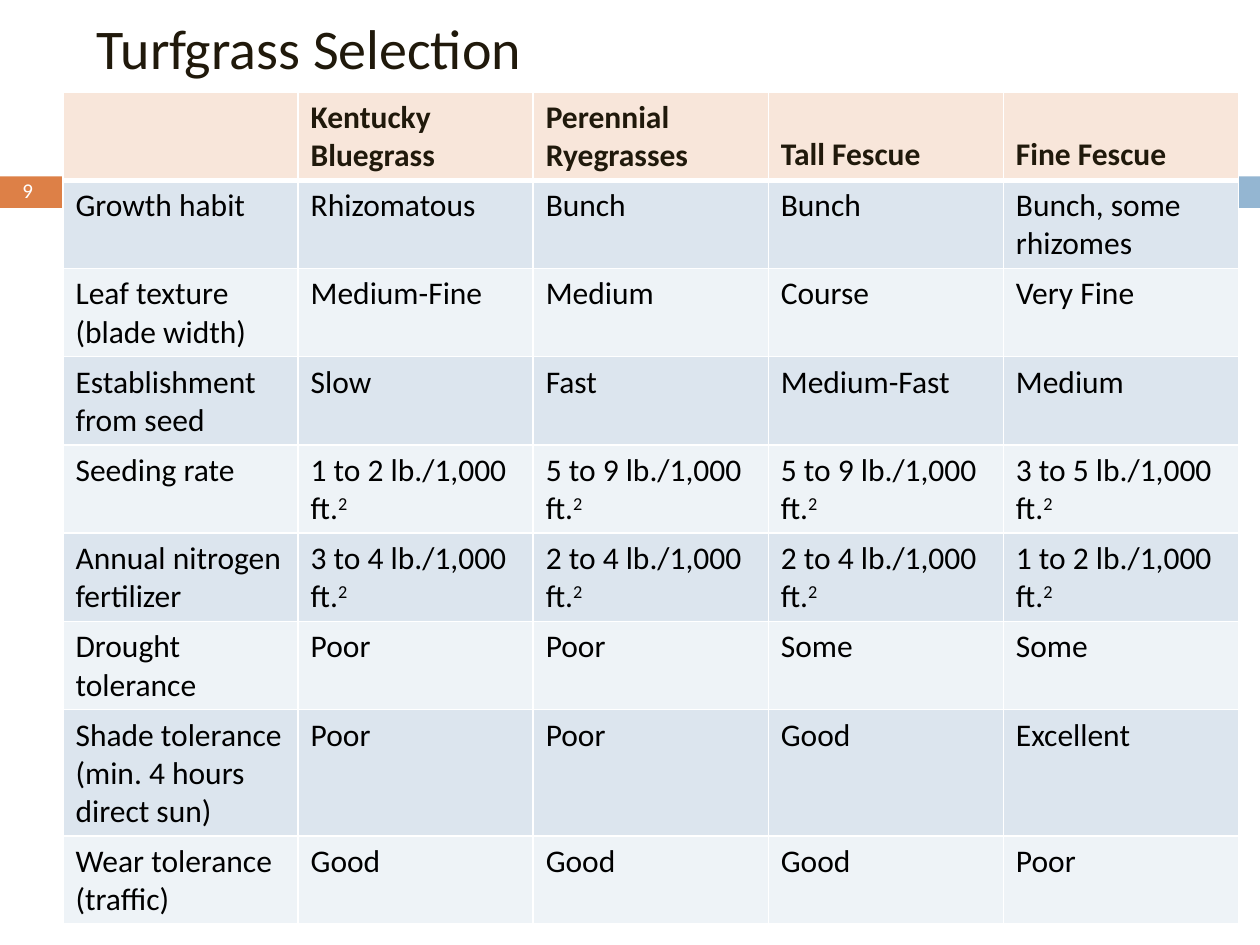
from lxml import etree
from pptx import Presentation
from pptx.dml.color import RGBColor
from pptx.enum.shapes import MSO_SHAPE
from pptx.enum.text import MSO_ANCHOR
from pptx.oxml.ns import qn
from pptx.util import Inches, Pt

RECT = MSO_SHAPE.RECTANGLE
TOP, MIDDLE, BOTTOM = MSO_ANCHOR.TOP, MSO_ANCHOR.MIDDLE, MSO_ANCHOR.BOTTOM
FONT = "Calibri"
COLORS = {
    "orange": "DD8047", "blue": "94B6D2", "white": "FFFFFF", "black": "000000",
    "dark": "20190B", "header": "F8E6DA", "odd": "DCE5EE", "even": "EEF3F7",
}
HEADER = ["", "Kentucky\vBluegrass", "Perennial\vRyegrasses", "Tall Fescue", "Fine Fescue"]
RATE = "{} lb./1,000 ft.²"
ROWS = [
    ["Growth habit", "Rhizomatous", "Bunch", "Bunch", "Bunch, some rhizomes"],
    ["Leaf texture\n(blade width)", "Medium-Fine", "Medium", "Course", "Very Fine"],
    ["Establishment from seed", "Slow", "Fast", "Medium-Fast", "Medium"],
    ["Seeding rate"] + [RATE.format(n) for n in ("1 to 2", "5 to 9", "5 to 9", "3 to 5")],
    ["Annual nitrogen\nfertilizer"]
    + [RATE.format(n) for n in ("3 to 4", "2 to 4", "2 to 4", "1 to 2")],
    ["Drought\ntolerance", "Poor", "Poor", "Some", "Some"],
    ["Shade tolerance (min. 4 hours direct sun)", "Poor", "Poor", "Good", "Excellent"],
    ["Wear tolerance (traffic)", "Good", "Good", "Good", "Poor"],
]


def rgb(name):
    """Return the named colour."""
    return RGBColor.from_string(COLORS[name])


def add_run(p, text, size, color, bold=False):
    """Add a styled run to a paragraph."""
    r = p.add_run()
    r.text = text
    r.font.name, r.font.size, r.font.bold = FONT, Pt(size), bold
    r.font.color.rgb = rgb(color)
    return r


def write(tf, text, size, color, bold=False):
    """Fill a text frame with paragraphs, line breaks and raised squares."""
    for i, para in enumerate(text.split("\n")):
        p = tf.add_paragraph() if i else tf.paragraphs[0]
        p.font.size = Pt(size)
        for j, line in enumerate(para.split("\v")):
            if j:
                p.add_line_break()
            base, square, _ = line.partition("²")
            if base:
                add_run(p, base, size, color, bold)
            if square:
                r = add_run(p, "2", size, color, bold)
                r._r.get_or_add_rPr().set("baseline", "30000")


def add_text(slide, box, text, size, color, anchor, wrap=True):
    """Add a text box in the given box."""
    tf = slide.shapes.add_textbox(*map(Inches, box)).text_frame
    tf.word_wrap, tf.vertical_anchor = wrap, anchor
    write(tf, text, size, color)


def add_band(slide, left, top, width, height):
    """Add the two-colour band with the slide number."""
    tab, gap = 0.58, 0.07
    parts = [(left, tab, "orange"), (left + tab + gap, width - tab - gap, "blue")]
    for x, w, color in parts:
        sp = slide.shapes.add_shape(RECT, *map(Inches, (x, top, w, height)))
        sp.shadow.inherit = False
        sp.fill.solid()
        sp.fill.fore_color.rgb = rgb(color)
        sp.line.fill.background()
    box = (left + 0.08, top - 0.04, tab - 0.08, 0.3)
    add_text(slide, box, "9", 12, "white", TOP, wrap=False)


def set_borders(cell, top, bottom):
    """Draw white cell borders with the given top and bottom widths."""
    tcPr = cell._tc.get_or_add_tcPr()
    for side, width in (("L", 1), ("R", 1), ("T", top), ("B", bottom)):
        ln = etree.SubElement(tcPr, qn(f"a:ln{side}"), w=str(Pt(width)))
        fill = etree.SubElement(ln, qn("a:solidFill"))
        etree.SubElement(fill, qn("a:srgbClr"), val=COLORS["white"])


def add_grass_table(slide, left, top, width, height):
    """Add the table that compares the grasses."""
    data = [HEADER] + ROWS
    box = map(Inches, (left, top, width, height))
    table = slide.shapes.add_table(len(data), len(HEADER), *box).table
    for col in table.columns:
        col.width = Inches(width / len(HEADER))
    for i, texts in enumerate(data):
        table.rows[i].height = Inches(0.64)
        head = i == 0
        fill = "header" if head else "odd" if i % 2 else "even"
        for j, text in enumerate(texts):
            cell = table.cell(i, j)
            set_borders(cell, 3 if i == 1 else 1, 3 if head else 1)
            cell.fill.solid()
            cell.fill.fore_color.rgb = rgb(fill)
            cell.vertical_anchor = BOTTOM if head else TOP
            write(cell.text_frame, text, 18, "dark" if head else "black", head)


def main():
    """Build and save the slide."""
    prs = Presentation()
    prs.slide_width, prs.slide_height = Inches(10), Inches(7.5)
    slide = prs.slides.add_slide(prs.slide_layouts[6])
    add_band(slide, 0, 1.4, 10, 0.25)
    add_grass_table(slide, 0.5, 0.73, 9.33, 6.6)
    add_text(slide, (0.67, -0.17, 8.92, 1.08), "Turfgrass Selection", 32, "dark", MIDDLE)
    prs.save("out.pptx")


if __name__ == "__main__":
    main()
